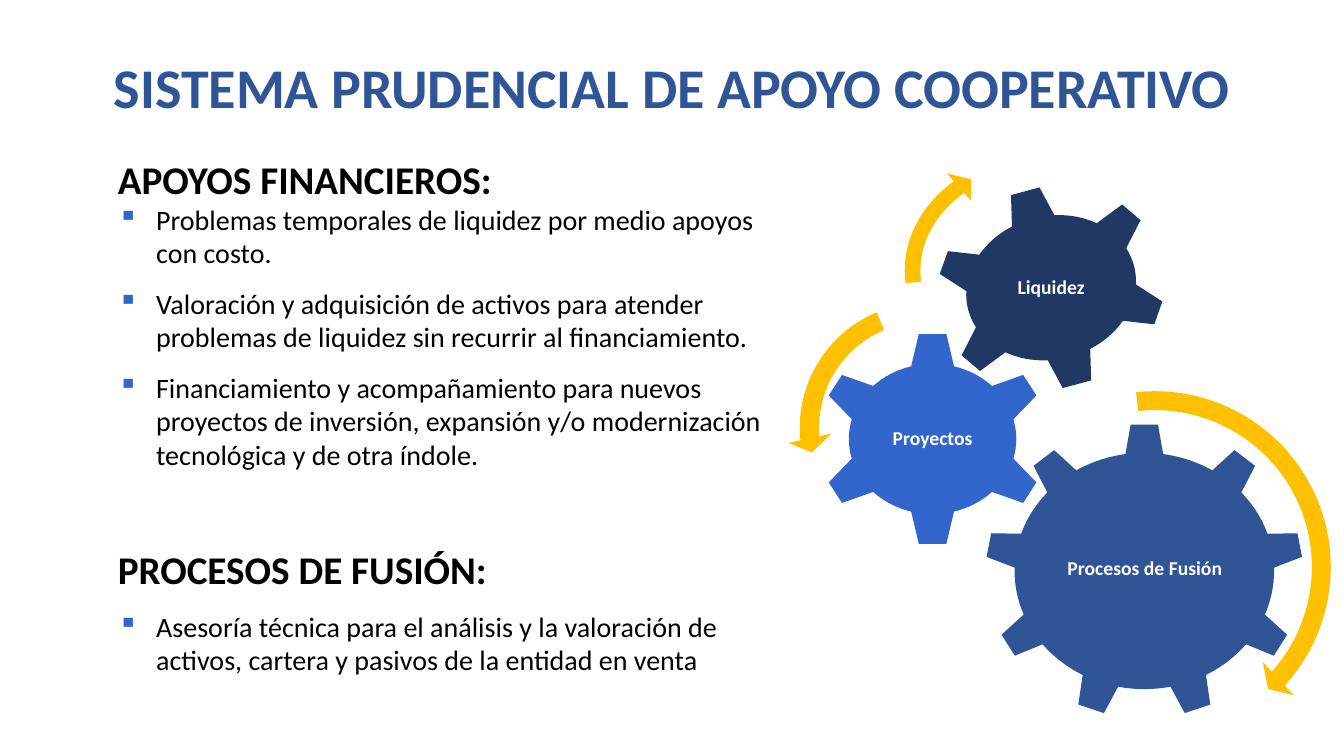
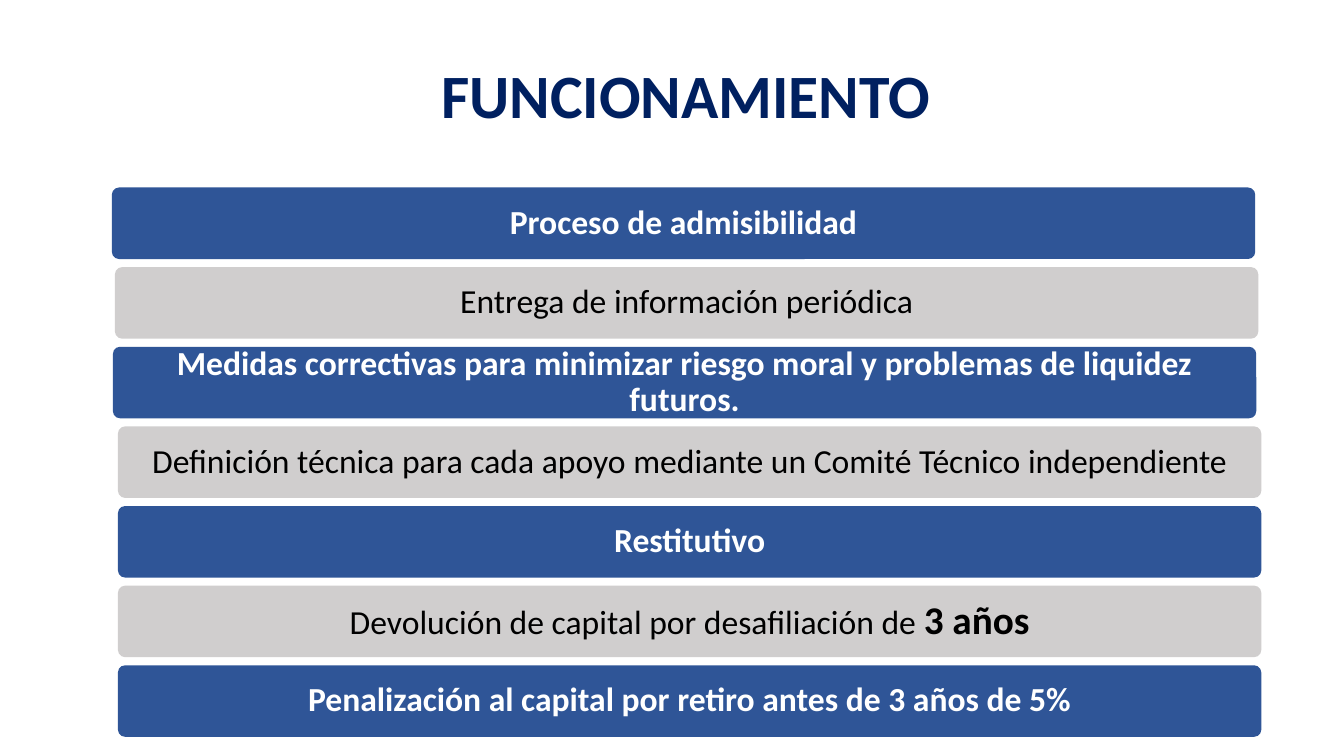
from lxml import etree
from pptx import Presentation
from pptx.dml.color import RGBColor
from pptx.enum import shapes, text
from pptx.oxml.ns import qn
from pptx.util import Inches, Pt

FONT = "Calibri"
BLUE, BRIGHT, NAVY, DEEP = "2F5597", "3366CC", "203864", "002060"
AMBER, GREY, BLACK, WHITE = "FFC000", "D0CECE", "000000", "FFFFFF"
MSO = shapes.MSO_SHAPE

# Content: supports slide
SUPPORTS = [
    ("APOYOS FINANCIEROS:", [
        "Problemas temporales de liquidez por medio apoyos con costo.",
        "Valoración y adquisición de activos para atender problemas de liquidez "
        "sin recurrir al financiamiento.",
        "Financiamiento y acompañamiento para nuevos proyectos de inversión, "
        "expansión y/o modernización tecnológica y de otra índole.",
    ]),
    ("PROCESOS DE FUSIÓN:", [
        "Asesoría técnica para el análisis y la valoración de activos, "
        "cartera y pasivos de la entidad en venta",
    ]),
]
# label, preset, box, rotation, fill, label box
GEARS = [
    ("Procesos de Fusión", MSO.GEAR_9, (9.77, 4.2, 3.16, 2.93), 0, BLUE,
     (10.39, 4.89, 1.93, 1.51)),
    ("Proyectos", MSO.GEAR_6, (8.1, 3.29, 2.3, 2.13), 0, BRIGHT,
     (8.66, 3.83, 1.18, 1.05)),
    ("Liquidez", MSO.GEAR_6, (9.27, 1.84, 2.31, 2.03), 345, NAVY,
     (9.79, 2.27, 1.27, 1.17)),
]
# preset, box, adjustments
TURN_ARROWS = [
    (MSO.CIRCULAR_ARROW, (9.58, 3.75, 3.75, 3.75), (0.05, 2.99, 25.3, 158.31, 0.06)),
    (MSO.LEFT_CIRCULAR_ARROW, (7.81, 2.88, 2.73, 2.73), (0.07, 4.3, 104.89, 148.38, 0.08)),
    (MSO.CIRCULAR_ARROW, (8.87, 1.39, 3.13, 2.59), (0.06, 3.94, 133.14, 105.08, 0.07)),
]

# Content: operation slide, as left edge, plain text and emphasised ending
STEPS = [
    (1.11, "Proceso de admisibilidad", ""),
    (1.14, "Entrega de información periódica", ""),
    (1.12, "Medidas correctivas para minimizar riesgo moral y problemas de "
           "liquidez futuros.", ""),
    (1.17, "Definición técnica para cada apoyo mediante un Comité Técnico "
           "independiente", ""),
    (1.17, "Restitutivo", ""),
    (1.17, "Devolución de capital por desafiliación de ", "3 años"),
    (1.17, "Penalización al capital por retiro antes de 3 años de 5%", ""),
]
BAR_TOP, BAR_PITCH, BAR_W, BAR_H = 1.86, 0.79, 11.34, 0.71


def rgb(value):
    return RGBColor.from_string(value)


def inches(box):
    return [Inches(v) for v in box]


def add_run(p, words, size, color, bold=False):
    r = p.add_run()
    r.text = words
    r.font.name, r.font.size, r.font.bold = FONT, Pt(size), bold
    r.font.color.rgb = rgb(color)


def centre(tf, inset_x, inset_y):
    """Centre a text frame both ways and return its first paragraph."""
    tf.word_wrap = True
    tf.vertical_anchor = text.MSO_ANCHOR.MIDDLE
    tf.margin_left = tf.margin_right = Inches(inset_x)
    tf.margin_top = tf.margin_bottom = Inches(inset_y)
    p = tf.paragraphs[0]
    p.alignment, p.line_spacing = text.PP_ALIGN.CENTER, 0.9
    return p


def add_shape(slide, preset, box, fill, adjustments=()):
    sp = slide.shapes.add_shape(preset, *inches(box))
    sp.shadow.inherit = False
    sp.fill.solid()
    sp.fill.fore_color.rgb = rgb(fill)
    sp.line.fill.background()
    for i, value in enumerate(adjustments):
        sp.adjustments[i] = value
    return sp


def add_slide(prs, title, left, top, size, color):
    slide = prs.slides.add_slide(prs.slide_layouts[5])
    sp = slide.shapes.title
    sp.left, sp.top, sp.width, sp.height = inches((left, top, 12.43, 1.45))
    add_run(centre(sp.text_frame, 0.1, 0.05), title, size, color, True)
    return slide


def add_bullet(p):
    pPr = p._p.get_or_add_pPr()
    pPr.set("marL", str(Inches(0.38)))
    pPr.set("indent", str(-Inches(0.38)))
    color = etree.SubElement(pPr, qn("a:buClr"))
    etree.SubElement(color, qn("a:srgbClr")).set("val", BRIGHT)
    etree.SubElement(pPr, qn("a:buChar")).set("char", "▪")


def build_supports(prs):
    slide = add_slide(prs, "SISTEMA PRUDENCIAL DE APOYO COOPERATIVO",
                      0.45, 0.17, 40, BLUE)
    # Gears with their labels
    for label, preset, box, rotation, fill, label_box in GEARS:
        add_shape(slide, preset, box, fill).rotation = rotation
        tb = slide.shapes.add_textbox(*inches(label_box))
        add_run(centre(tb.text_frame, 0.02, 0.02), label, 14, WHITE, True)
    for preset, box, adjustments in TURN_ARROWS:
        add_shape(slide, preset, box, AMBER, adjustments)

    # Headed lists
    tf = slide.shapes.add_textbox(*inches((1.07, 1.49, 6.88, 5.32))).text_frame
    tf.word_wrap = True
    for n, (heading, items) in enumerate(SUPPORTS):
        p = tf.add_paragraph() if n else tf.paragraphs[0]
        if n:
            p.space_before, p.space_after = Pt(41), Pt(12)
        add_run(p, heading, 28, BLACK, True)
        for item in items:
            p = tf.add_paragraph()
            p.space_after = Pt(12)
            add_bullet(p)
            add_run(p, item, 20, BLACK)


def build_operation(prs):
    slide = add_slide(prs, "FUNCIONAMIENTO", 0.59, 0.25, 44, DEEP)
    # Stacked bars in alternating colours
    for i, (left, words, ending) in enumerate(STEPS):
        strong = i % 2 == 0
        fill, color = (BLUE, WHITE) if strong else (GREY, BLACK)
        box = (left, BAR_TOP + i * BAR_PITCH, BAR_W, BAR_H)
        sp = add_shape(slide, MSO.ROUNDED_RECTANGLE, box, fill, (0.1,))
        p = centre(sp.text_frame, 0.07, 0.05)
        add_run(p, words, 24, color, strong)
        if ending:
            add_run(p, ending, 28, color, True)


def main():
    prs = Presentation()
    prs.slide_width, prs.slide_height = Inches(13.33), Inches(7.5)
    build_supports(prs)
    build_operation(prs)
    prs.save("out.pptx")


if __name__ == "__main__":
    main()
